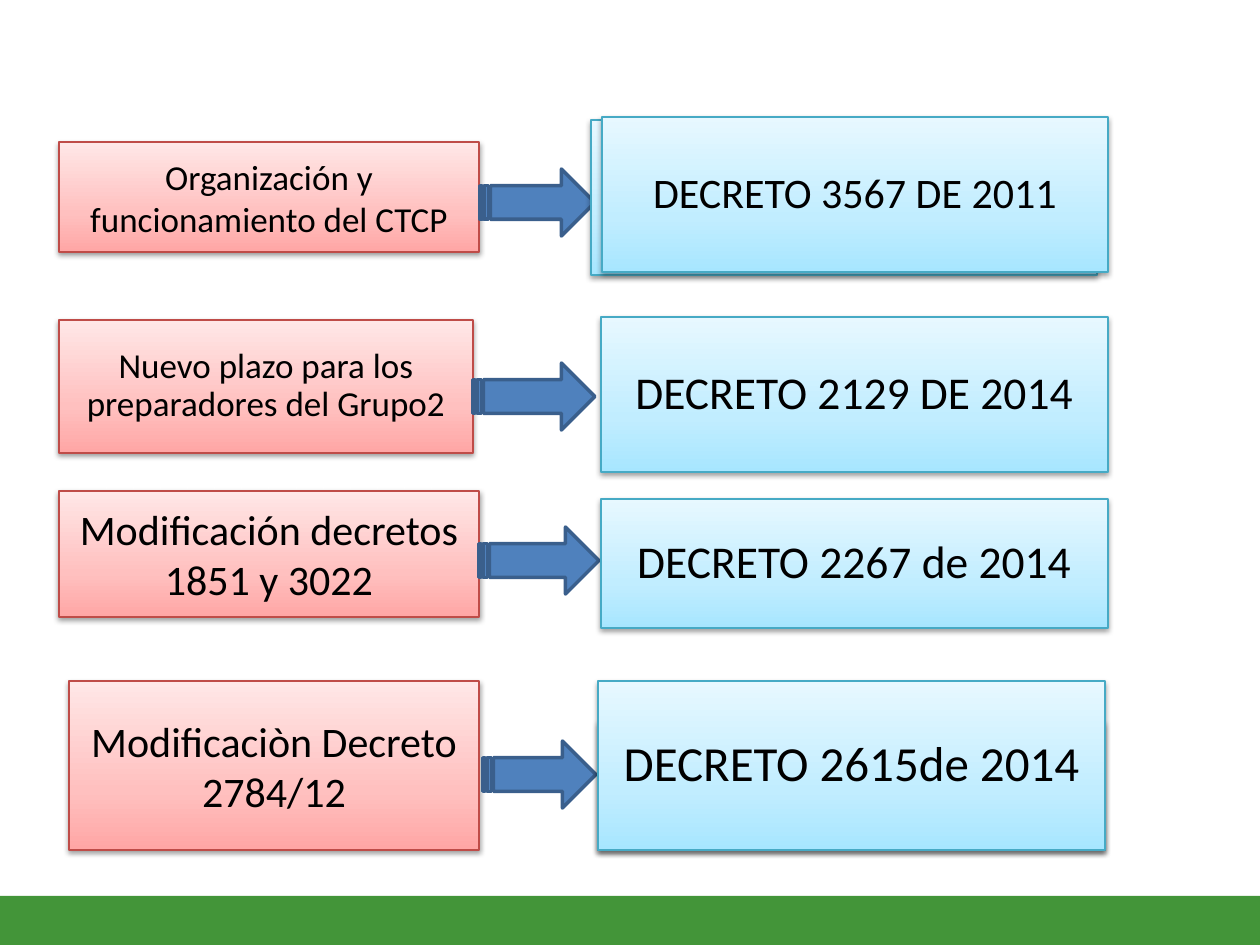
from copy import deepcopy
from lxml import etree
from pptx import Presentation
from pptx.dml.color import RGBColor
from pptx.enum.shapes import MSO_SHAPE
from pptx.enum.text import MSO_ANCHOR, PP_ALIGN
from pptx.oxml.ns import qn
from pptx.util import Pt

RECT = MSO_SHAPE.RECTANGLE
ARROW = MSO_SHAPE.STRIPED_RIGHT_ARROW
MIDDLE = MSO_ANCHOR.MIDDLE
CENTER = PP_ALIGN.CENTER

SCALE = 914400 / 126
FONT = "Calibri"
BLACK = RGBColor(0x00, 0x00, 0x00)
GREEN = RGBColor(0x43, 0x95, 0x39)
NAVY = RGBColor(0x3A, 0x5F, 0x8C)
STEEL = RGBColor(0x4F, 0x81, 0xBD)
STOPS = (0, 0.35, 1)
RED = (
    RGBColor(0xBF, 0x4C, 0x48),
    (RGBColor(0xFF, 0xA6, 0xA5), RGBColor(0xFF, 0xC0, 0xBF), RGBColor(0xFF, 0xE7, 0xE7)),
)
BLUE = (
    RGBColor(0x46, 0xAA, 0xC5),
    (RGBColor(0xA7, 0xE6, 0xFF), RGBColor(0xC1, 0xED, 0xFF), RGBColor(0xE7, 0xF8, 0xFF)),
)

ROWS = [
    {
        "topic": ("Organización y funcionamiento del CTCP", 20, False, (59, 142, 420, 110)),
        "arrow": (480, 169, 115, 67),
        "back": (591, 120, 506, 155),
        "decree": ("DECRETO 3567 DE 2011", 24, True, (602, 117, 506, 155)),
    },
    {
        "topic": ("Nuevo plazo para los preparadores del Grupo2", 20, True, (59, 320, 414, 133)),
        "arrow": (473, 363, 122, 67),
        "decree": ("DECRETO 2129 DE 2014", 26, True, (601, 317, 507, 155)),
    },
    {
        "topic": ("Modificación decretos 1851 y 3022", 24, False, (59, 491, 420, 126)),
        "arrow": (479, 527, 120, 67),
        "decree": ("DECRETO 2267 de 2014", 26, True, (601, 499, 507, 129)),
    },
    {
        "topic": ("Modificaciòn Decreto 2784/12", 24, False, (69, 681, 410, 169)),
        "arrow": (483, 741, 113, 67),
        "back": (598, 722, 507, 128),
        "decree": ("DECRETO 2615de 2014", 28, True, (598, 681, 507, 169)),
    },
]


def px(num):
    return round(num * SCALE)


def add_flat(slide, kind, area, color):
    shape = slide.shapes.add_shape(kind, *map(px, area))
    shape.shadow.inherit = False
    shape.fill.solid()
    shape.fill.fore_color.rgb = color
    return shape


def add_box(slide, area, style):
    edge, shades = style
    shape = slide.shapes.add_shape(RECT, *map(px, area))
    shape.fill.gradient()
    shape.fill.gradient_angle = 90
    props = shape._element.spPr
    stops = props.find(".//" + qn("a:gsLst"))
    stops.append(deepcopy(stops[0]))
    for stop, place, shade in zip(shape.fill.gradient_stops, STOPS, shades):
        stop.position = place
        stop.color.rgb = shade
    shape.line.color.rgb = edge
    shape.line.width = Pt(0.75)
    shape.shadow.inherit = False
    effects = props.find(qn("a:effectLst"))
    cast = etree.SubElement(
        effects, qn("a:outerShdw"), blurRad=str(Pt(3.1)), dist=str(Pt(1.6)),
        dir="5400000", rotWithShape="0",
    )
    tint = etree.SubElement(cast, qn("a:srgbClr"), val="000000")
    etree.SubElement(tint, qn("a:alpha"), val="38000")
    return shape


def add_label(slide, text, size, tight, area, style):
    frame = add_box(slide, area, style).text_frame
    frame.word_wrap = True
    frame.vertical_anchor = MIDDLE
    frame.text = text
    para = frame.paragraphs[0]
    para.alignment = CENTER
    if tight:
        para.line_spacing = 0.9
        frame.margin_left = frame.margin_right = px(3)
        frame.margin_top = frame.margin_bottom = px(3)
    font = para.runs[0].font
    font.name = FONT
    font.size = Pt(size)
    font.color.rgb = BLACK


def main():
    deck = Presentation()
    deck.slide_width, deck.slide_height = px(1260), px(945)
    slide = deck.slides.add_slide(deck.slide_layouts[6])
    band = add_flat(slide, RECT, (0, 896, 1260, 49), GREEN)
    band.line.fill.background()
    for row in ROWS:
        add_label(slide, *row["topic"], RED)
        arrow = add_flat(slide, ARROW, row["arrow"], STEEL)
        arrow.line.color.rgb = NAVY
        arrow.line.width = Pt(2)
        if "back" in row:
            add_box(slide, row["back"], BLUE)
        add_label(slide, *row["decree"], BLUE)
    deck.save("out.pptx")


if __name__ == "__main__":
    main()
